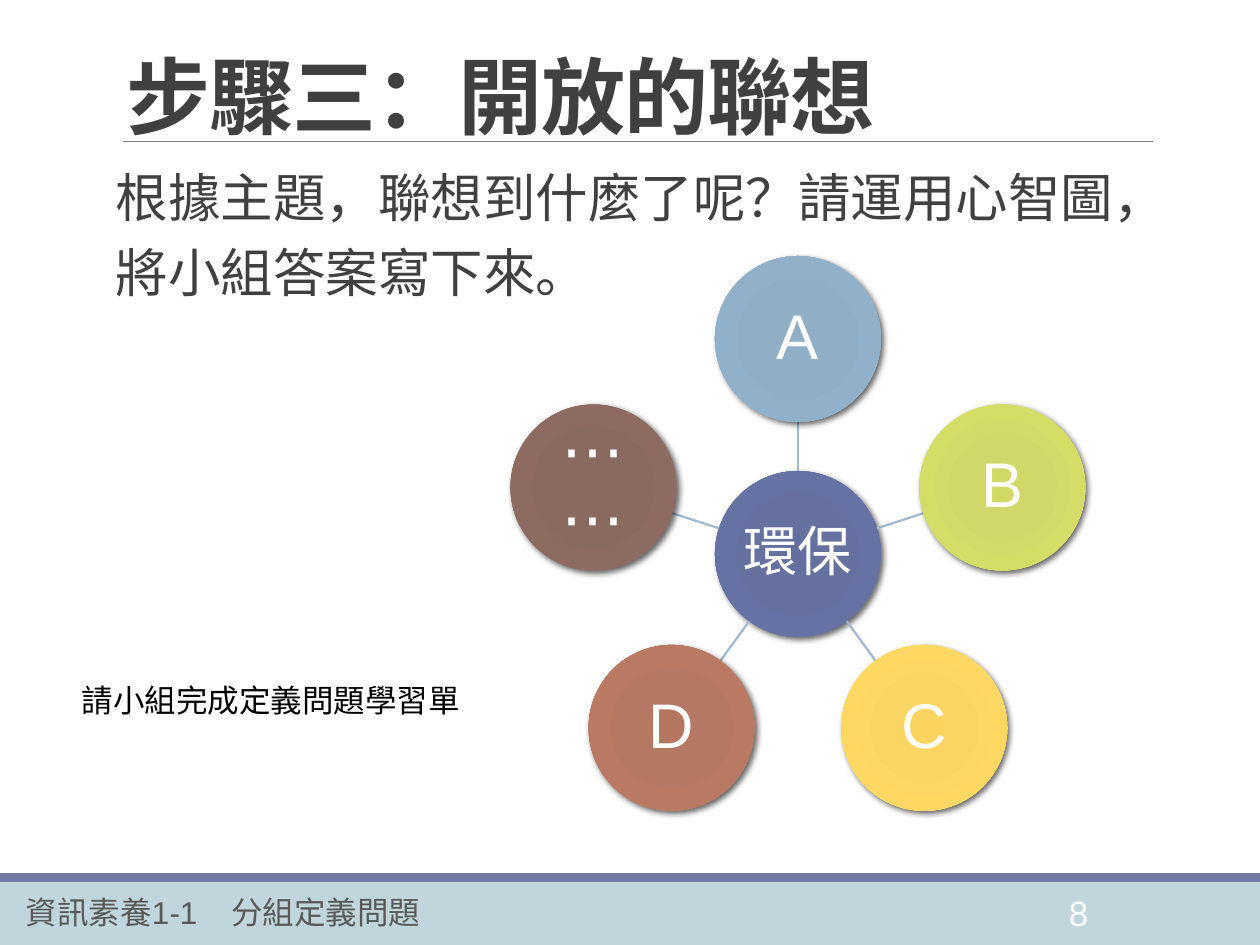
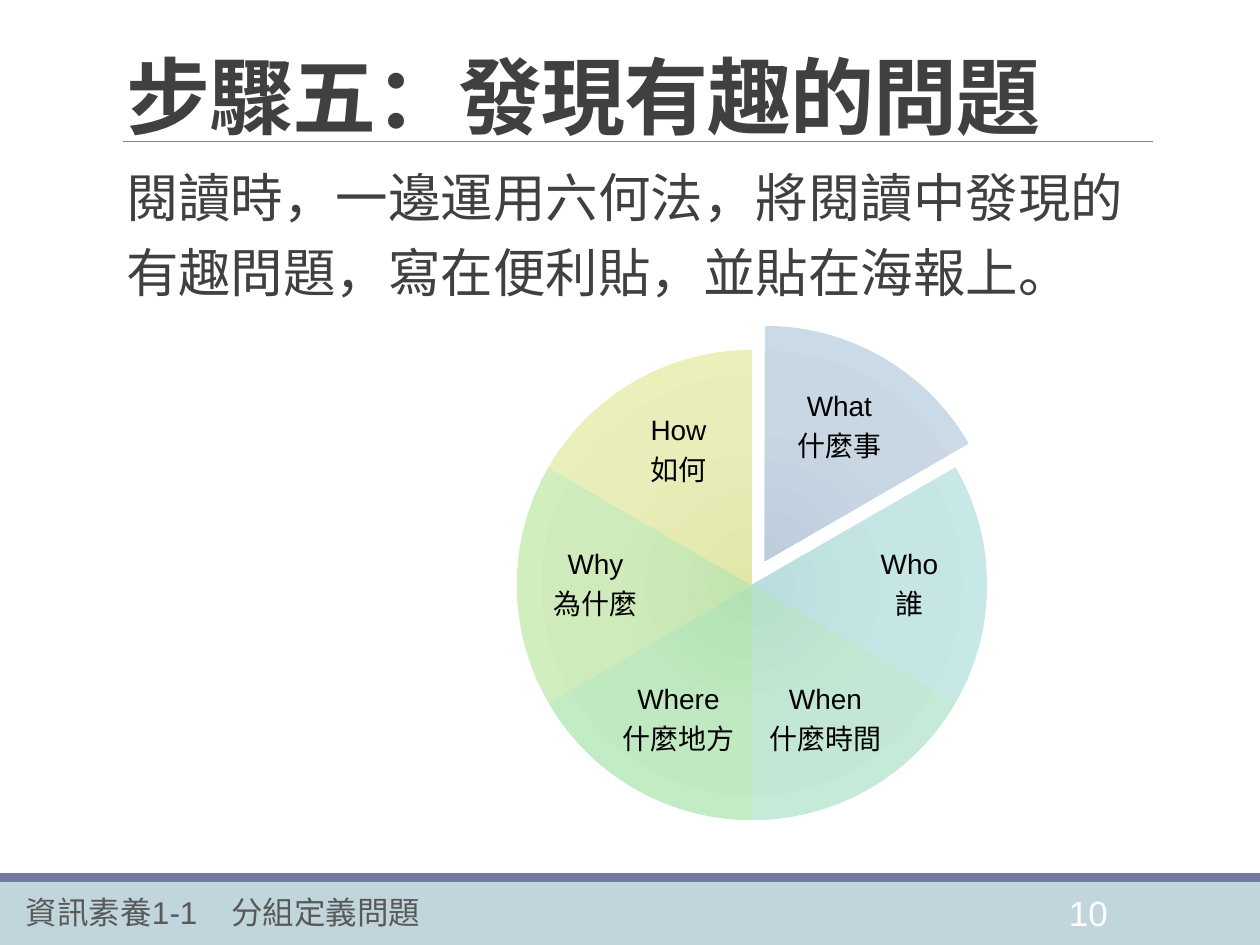
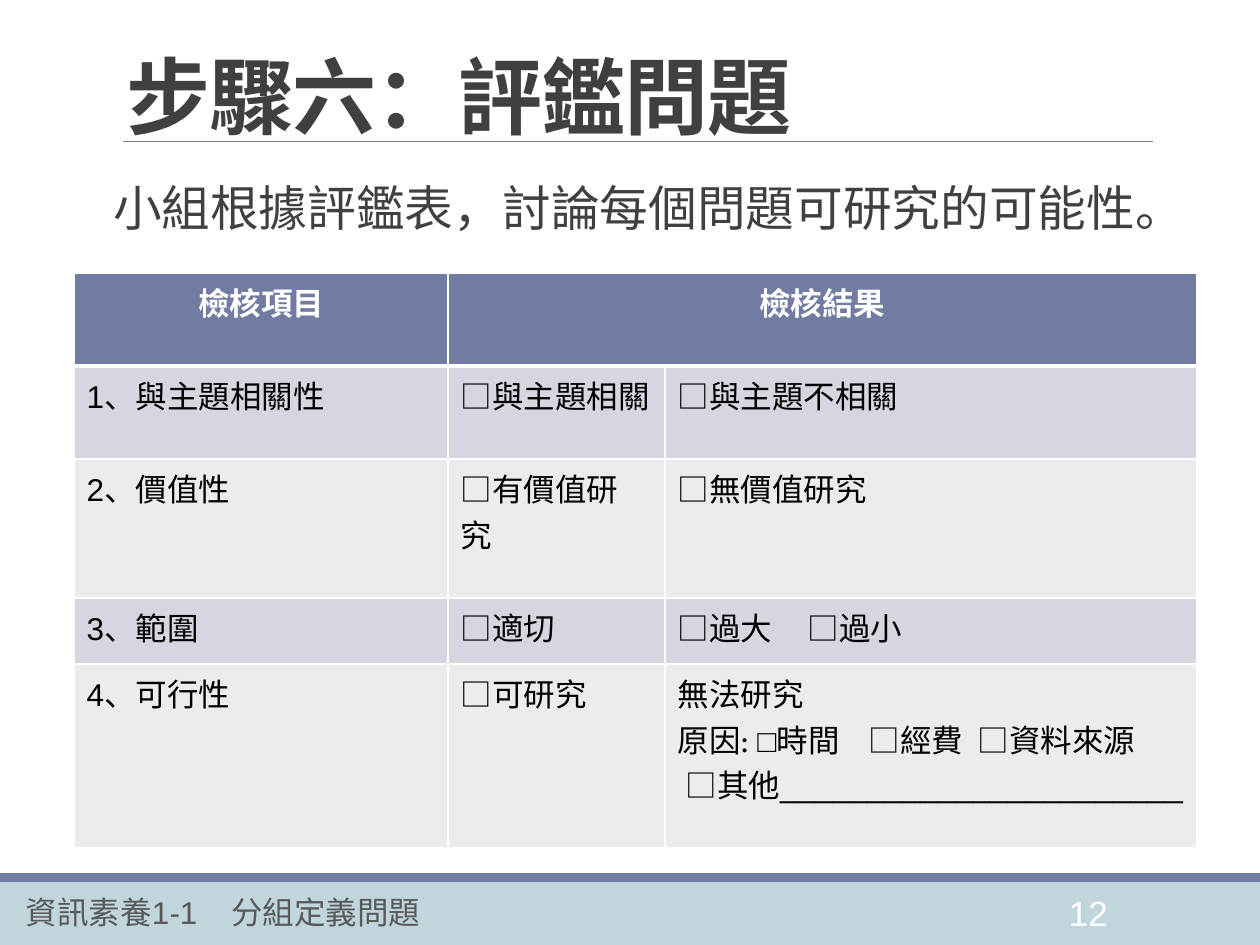
"""Build three slides on defining a research question."""
from math import cos, radians, sin

from lxml.etree import SubElement
from pptx import Presentation
from pptx.dml.color import RGBColor
from pptx.enum.shapes import MSO_CONNECTOR, MSO_SHAPE
from pptx.enum.text import MSO_ANCHOR, PP_ALIGN
from pptx.oxml.ns import qn
from pptx.util import Pt

LINE = MSO_CONNECTOR.STRAIGHT
RECT, OVAL, PIE = MSO_SHAPE.RECTANGLE, MSO_SHAPE.OVAL, MSO_SHAPE.PIE
TOP, MIDDLE, BOTTOM = MSO_ANCHOR.TOP, MSO_ANCHOR.MIDDLE, MSO_ANCHOR.BOTTOM
LEFT, CENTER = PP_ALIGN.LEFT, PP_ALIGN.CENTER

WHITE = RGBColor(0xFF, 0xFF, 0xFF)
BLACK = RGBColor(0x00, 0x00, 0x00)
INK = RGBColor(0x40, 0x40, 0x40)
GRAY = RGBColor(0x59, 0x59, 0x59)
RULE = RGBColor(0x80, 0x80, 0x80)
PALE = RGBColor(0xC0, 0xD6, 0xDC)
INDIGO = RGBColor(0x72, 0x7C, 0xA3)
SPOKE = RGBColor(0x9F, 0xB8, 0xCD)
BANDS = [RGBColor(0xD5, 0xD7, 0xE0), RGBColor(0xEB, 0xEC, 0xF0)]

ARIAL, NOTO, SPARTAN = "Arial", "Noto Sans CJK SC", "League Spartan"
INSET = (13, 6, 13, 6)

HUB = ("環保", 31, "636F9F 66719F 6672A3 707BA5")
NODES = [
    ("A", 36, "8EACC5 90AEC6 91B0CA 9DB8CF"),
    ("B", 36, "CFD964 CFD868 D4DE67 D6DF75"),
    ("C", 36, "FBD460 FAD564 FFD864 FFDC75"),
    ("D", 36, "B57660 B57863 BA7963 BC826E"),
    ("⋯⋯", 36, "89695E 8A6A60 8D6B60 907268"),
]
SLICES = [
    ("What", "什麼事", "BDCDDC C9D7E4 CDDCE9", 771, 377),
    ("Who", "誰", "B9DEDD C6E5E5 CAEBEA", 841, 535),
    ("When", "什麼時間", "B5E0C9 C3E7D4 C7EDD9", 757, 670),
    ("Where", "什麼地方", "B1E2B3 C0E9C1 C3EFC5", 610, 670),
    ("Why", "為什麼", "C3E4AE CFEBBC D3F1C0", 527, 535),
    ("How", "如何", "E1E7AA E8EDB9 EEF3BD", 610, 401),
]
HEADS = ["檢核項目", "檢核結果"]
CHECKS = [
    ("1、與主題相關性", "□與主題相關", ["□與主題不相關"]),
    ("2、價值性", "□有|價值|研究　", ["□無|價值|研究"]),
    ("3、範圍", "□適切", ["□過大\t□過小"]),
    ("4、可行性", "□可研究",
     ["無法研究", "原因:| □時間\t□經費\t□資料來源",
      "|□其他_______________________"]),
]


def px(n):
    """Turn pixels into EMU."""
    return round(n * 914400 / 126)


def write(frame, lines, size, color, face=ARIAL, bold=False, align=LEFT,
          gap=1.0, after=0, tabs=(), track=0):
    """Fill a text frame; parts between bars are set in Arial."""
    for i, line in enumerate(lines):
        para = frame.paragraphs[0] if i == 0 else frame.add_paragraph()
        para.alignment = align
        para.line_spacing = gap
        if after:
            para.space_after = Pt(after)
        if tabs and "\t" in line:
            stops = SubElement(para._p.get_or_add_pPr(), qn("a:tabLst"))
            for tab in tabs[:line.count("\t")]:
                SubElement(stops, qn("a:tab"), pos=str(px(tab)), algn="l")
        font = para.font
        font.name, font.size, font.bold = face, Pt(size), bold
        font.color.rgb = color
        SubElement(font._rPr, qn("a:ea"), typeface=NOTO)
        if track:
            font._rPr.set("spc", str(track))
        for j, part in enumerate(line.split("|")):
            if part:
                run = para.add_run()
                run.text = part
                if j % 2:
                    run.font.name = ARIAL


def setup(frame, inset, anchor):
    """Set wrap, insets and anchor of a text frame."""
    frame.word_wrap = True
    frame.vertical_anchor = anchor
    (frame.margin_left, frame.margin_top,
     frame.margin_right, frame.margin_bottom) = map(px, inset)


def label(slide, box, lines, size, color, inset=INSET, anchor=TOP, **style):
    """Add a text box."""
    frame = slide.shapes.add_textbox(*map(px, box)).text_frame
    setup(frame, inset, anchor)
    write(frame, lines, size, color, **style)
    return frame


def figure(slide, kind, box):
    """Add a preset shape with no line and no shadow."""
    shape = slide.shapes.add_shape(kind, *map(px, box))
    shape.shadow.inherit = False
    shape.line.fill.background()
    return shape


def band(slide, box, color):
    """Add a plain filled rectangle."""
    shape = figure(slide, RECT, box)
    shape.fill.solid()
    shape.fill.fore_color.rgb = color


def glow(shape, tones, marks):
    """Fill a shape with a round gradient."""
    shape.fill.gradient()
    grad = shape._element.spPr.find(qn("a:gradFill"))
    for child in list(grad):
        grad.remove(child)
    stops = SubElement(grad, qn("a:gsLst"))
    for tone, mark in zip(tones.split(), marks):
        stop = SubElement(stops, qn("a:gs"), pos=str(mark * 1000))
        SubElement(stop, qn("a:srgbClr"), val=tone)
    way = SubElement(grad, qn("a:path"), path="circle")
    SubElement(way, qn("a:fillToRect"), {k: "100000" for k in "ltrb"})


def shade(shape):
    """Drop a soft shadow to the lower right."""
    effects = shape._element.spPr.find(qn("a:effectLst"))
    outer = SubElement(effects, qn("a:outerShdw"), blurRad="44450",
                       dist="25400", dir="2700000", rotWithShape="0")
    tint = SubElement(outer, qn("a:srgbClr"), val="000000")
    SubElement(tint, qn("a:alpha"), val="60000")


def stroke(slide, ends, color, width):
    """Add a straight line."""
    line = slide.shapes.add_connector(LINE, *map(px, ends))
    line.line.color.rgb = color
    line.line.width = Pt(width)
    SubElement(line._element.spPr, qn("a:effectLst"))


def page(deck, title, number):
    """Add a slide with its title, rule and footer."""
    slide = deck.slides.add_slide(deck.slide_layouts[6])
    band(slide, (0, 882, 1260, 63), PALE)
    band(slide, (0, 873, 1260, 9), INDIGO)
    stroke(slide, (123, 141, 1153, 141), RULE, 0.5)
    label(slide, (1056, 886, 88, 50), [number], 20, WHITE)
    label(slide, (13, 887, 586, 50), ["資訊素養1-1\t分組定義問題"], 18, GRAY,
          tabs=[205])
    label(slide, (113, 50, 1040, 102), [title], 48, INK, anchor=BOTTOM,
          face=NOTO, bold=True, gap=0.85, track=-50)
    return slide


def body(slide, box, text, size=30, indent=0):
    """Add the lead text under the title."""
    label(slide, box, [text], size, INK, inset=(indent, 6, 0, 6),
          face=NOTO, gap=1.2)


def bubble(slide, x, y, text, size, tones):
    """Add a shaded circle around a centre."""
    shape = figure(slide, OVAL, (x - 83, y - 83, 166, 166))
    glow(shape, tones, (0, 34, 70, 100))
    shade(shape)
    setup(shape.text_frame, (3, 3, 3, 3), MIDDLE)
    write(shape.text_frame, [text], size, WHITE, align=CENTER, gap=0.9)


def mindmap(slide, x, y):
    """Draw the hub and its ring of nodes."""
    bubble(slide, x, y, *HUB)
    for i, node in enumerate(NODES):
        turn = radians(360 / len(NODES) * i - 90)
        dx, dy = cos(turn), sin(turn)
        stroke(slide, (x + 83 * dx, y + 83 * dy, x + 133 * dx, y + 133 * dy),
               SPOKE, 1.25)
        bubble(slide, x + 215 * dx, y + 215 * dy, *node)


def wheel(slide):
    """Draw the six question slices, the first pulled out."""
    for i, (word, gloss, tones, x, y) in enumerate(SLICES):
        spot = (517, 350) if i else (530, 326)
        shape = figure(slide, PIE, (*spot, 470, 470))
        shape.adjustments[0] = (162 + 36 * i) % 216
        shape.adjustments[1] = (198 + 36 * i) % 216
        glow(shape, tones, (0, 45, 100))
        label(slide, (x, y, 137, 101), [word, gloss], 16, BLACK,
              inset=(3, 3, 3, 3), anchor=MIDDLE, align=CENTER, gap=0.9,
              after=5.6)


def edge(cell, top, bottom):
    """Set white borders of a cell."""
    props = cell._tc.get_or_add_tcPr()
    for side, width in zip("LRTB", (1, 1, top, bottom)):
        line = SubElement(props, qn("a:ln" + side), w=str(Pt(width)))
        fill = SubElement(line, qn("a:solidFill"))
        SubElement(fill, qn("a:srgbClr"), val="FFFFFF")


def paint(cell, color, top=1, bottom=1):
    """Set fill and borders of a cell."""
    edge(cell, top, bottom)
    cell.fill.solid()
    cell.fill.fore_color.rgb = color


def checklist(slide):
    """Add the table of checks."""
    wide, tall = (374, 217, 532), (93, 93, 139, 66, 184)
    table = slide.shapes.add_table(
        len(tall), len(wide), *map(px, (74, 273, sum(wide), sum(tall)))).table
    for column, size in zip(table.columns, wide):
        column.width = px(size)
    for row, size in zip(table.rows, tall):
        row.height = px(size)
    for cell in table.rows[0].cells:
        paint(cell, INDIGO, bottom=3)
    table.cell(0, 1).merge(table.cell(0, 2))
    for i, head in enumerate(HEADS):
        write(table.cell(0, i).text_frame, [head], 18, WHITE, bold=True,
              align=CENTER)
    for i, (item, good, bad) in enumerate(CHECKS, 1):
        tabs = [130] if i == 3 else [191, 300]
        texts = [([item], ARIAL), ([good], SPARTAN), (bad, SPARTAN)]
        for j, (lines, face) in enumerate(texts):
            cell = table.cell(i, j)
            paint(cell, BANDS[(i - 1) % 2], top=3 if i == 1 else 1)
            write(cell.text_frame, lines, 18, BLACK, face=face, tabs=tabs)
    other = table.cell(4, 2).text_frame.paragraphs[2]
    other._p.get_or_add_pPr().set("indent", str(px(8)))


def main():
    """Build and save the slides."""
    deck = Presentation()
    deck.slide_width, deck.slide_height = px(1260), px(945)

    slide = page(deck, "步驟三：開放的聯想", "8")
    body(slide, (116, 146, 1040, 176),
         "根據主題，聯想到什麼了呢？請運用心智圖，將小組答案寫下來。")
    mindmap(slide, 798, 554)
    label(slide, (69, 675, 437, 50), ["請小組完成定義問題學習單"], 18, BLACK)

    slide = page(deck, "步驟五：發現有趣的問題", "10")
    body(slide, (113, 146, 1040, 617),
         "閱讀時，一邊運用六何法，將閱讀中發現的有趣問題，寫在便利貼，並貼在海報上。",
         indent=13)
    wheel(slide)

    slide = page(deck, "步驟六：評鑑問題", "12")
    body(slide, (113, 160, 1040, 113),
         "小組根據評鑑表，討論每個問題可研究的可能性。", size=27.8)
    checklist(slide)

    deck.save("out.pptx")


if __name__ == "__main__":
    main()
